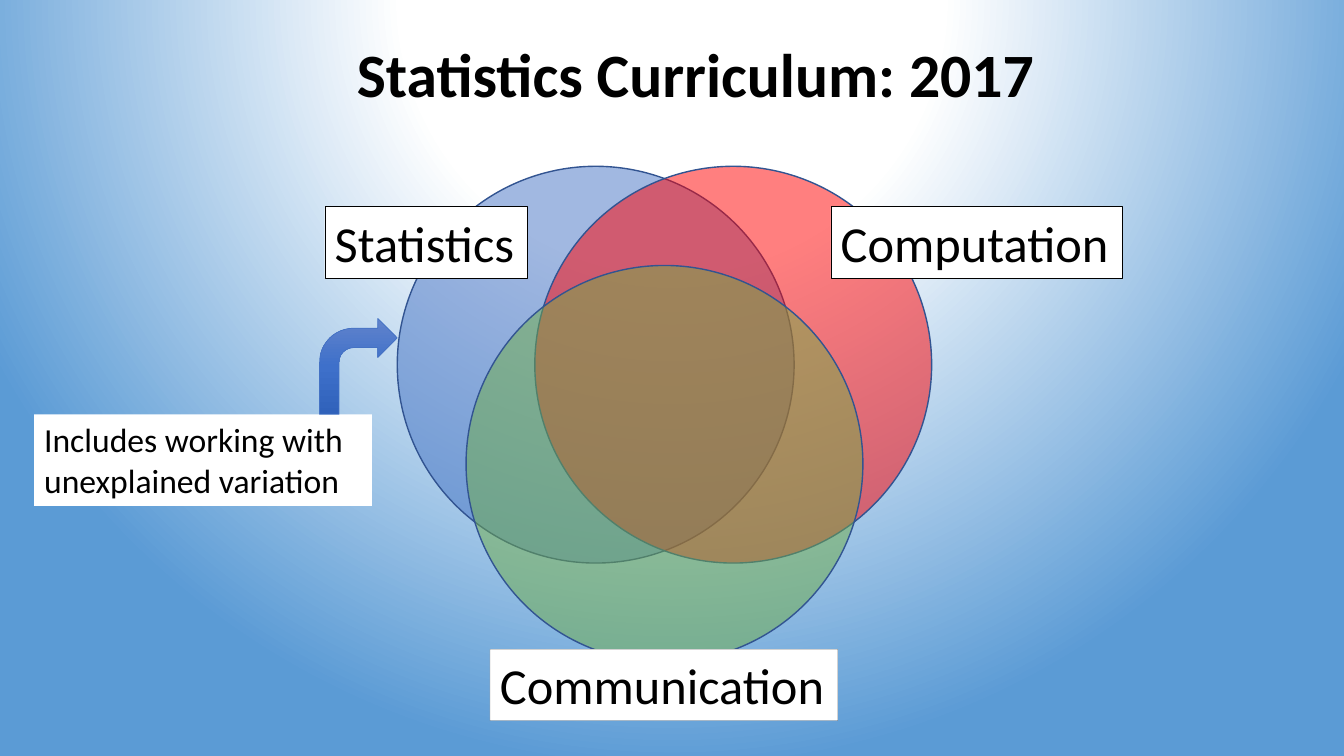
from dataclasses import dataclass

import lxml.etree
import pptx
import pptx.dml.color
import pptx.enum.shapes
import pptx.enum.text
import pptx.oxml.ns
import pptx.util

SHAPES = pptx.enum.shapes.MSO_SHAPE
qn = pptx.oxml.ns.qn


@dataclass(frozen=True)
class Theme:
    font: str = "Calibri"
    title_size: int = 44
    label_size: int = 36
    note_size: int = 24
    text: str = "000000"
    panel: str = "FFFFFF"
    statistics: str = "4472C4"
    computation: str = "FF0000"
    communication: str = "70AD47"
    circle_line: str = "325491"
    arrow_line: str = "4472C4"
    backdrop: tuple = ((0, "FFFFFF"), (35, "FFFFFF"), (100, "5B9BD5"))
    arrow: tuple = ((0, "6183CB"), (50, "3E70CA"), (100, "3062BB"))


THEME = Theme()


@dataclass(frozen=True)
class Box:
    """A rectangle in inches."""
    left: float
    top: float
    width: float
    height: float

    def inner(self, left, top, width, height):
        """Return an inner box given in percent of this one."""
        return Box(self.left + self.width * left / 100,
                   self.top + self.height * top / 100,
                   self.width * width / 100,
                   self.height * height / 100)

    def lengths(self):
        return [pptx.util.Inches(value) for value in
                (self.left, self.top, self.width, self.height)]


def rgb(color):
    return pptx.dml.color.RGBColor.from_string(color)


def set_alpha(element, percent):
    """Make the solid colour inside a fill or line element translucent."""
    color = next(element.iter(qn("a:srgbClr")))
    lxml.etree.SubElement(color, qn("a:alpha"), val=str(percent * 1000))


def set_gradient(owner, stops):
    """Refill the gradient of an element and return it without a direction."""
    gradient = next(owner.iter(qn("a:gradFill")))
    for child in list(gradient):
        gradient.remove(child)
    stop_list = lxml.etree.SubElement(gradient, qn("a:gsLst"))
    for position, color in stops:
        stop = lxml.etree.SubElement(stop_list, qn("a:gs"), pos=str(position * 1000))
        lxml.etree.SubElement(stop, qn("a:srgbClr"), val=color)
    return gradient


def add_backdrop(slide):
    slide.background.fill.gradient()
    gradient = set_gradient(slide.element, THEME.backdrop)
    direction = lxml.etree.SubElement(gradient, qn("a:path"), {"path": "circle"})
    lxml.etree.SubElement(direction, qn("a:fillToRect"),
                          l="50000", t="-80000", r="50000", b="180000")


def add_shape(slide, kind, box, fill=None, line=None, line_width=1):
    shape = slide.shapes.add_shape(kind, *box.lengths())
    shape.shadow.inherit = False
    if fill:
        shape.fill.solid()
        shape.fill.fore_color.rgb = rgb(fill)
    if line:
        shape.line.color.rgb = rgb(line)
        shape.line.width = pptx.util.Pt(line_width)
    else:
        shape.line.fill.background()
    return shape


def write(shape, text, size, bold=False, wrap=False):
    frame = shape.text_frame
    frame.word_wrap = wrap
    frame.auto_size = pptx.enum.text.MSO_AUTO_SIZE.SHAPE_TO_FIT_TEXT
    frame.vertical_anchor = pptx.enum.text.MSO_ANCHOR.TOP
    paragraph = frame.paragraphs[0]
    paragraph.alignment = pptx.enum.text.PP_ALIGN.LEFT
    run = paragraph.add_run()
    run.text = text
    run.font.name = THEME.font
    run.font.size = pptx.util.Pt(size)
    run.font.bold = bold
    run.font.color.rgb = rgb(THEME.text)


def add_title(slide, box):
    title = slide.shapes.add_textbox(*box.lengths())
    write(title, "Statistics Curriculum: 2017", THEME.title_size, bold=True)


def add_venn(slide, box):
    """Draw three overlapping circles with their labels."""
    diameter = 0.8 * box.height
    across = box.width - diameter
    down = box.height - diameter
    circles = ((0, 0, THEME.statistics),
               (across, 0, THEME.computation),
               (across / 2, down, THEME.communication))
    for left, top, color in circles:
        circle_box = Box(box.left + left, box.top + top, diameter, diameter)
        circle = add_shape(slide, SHAPES.OVAL, circle_box, color, THEME.circle_line)
        set_alpha(circle.element.spPr.find(qn("a:solidFill")), 50)

    labels = (("Statistics", -13.58, 8.13, 37.92, 100),
              ("Computation", 81.13, 8.13, 54.53, 100),
              ("Communication", 17.36, 97.36, 65.09, 50))
    for text, left, top, width, line_alpha in labels:
        label = add_shape(slide, SHAPES.RECTANGLE, box.inner(left, top, width, 14.43),
                          THEME.panel, THEME.text, 0.25)
        if line_alpha < 100:
            set_alpha(label.element.spPr.find(qn("a:ln")), line_alpha)
        write(label, text, THEME.label_size)


def add_callout(slide, box):
    """Place the note with the bent arrow that leaves its top edge."""
    note = add_shape(slide, SHAPES.RECTANGLE, box.inner(0, 51.08, 93.06, 48.92), THEME.panel)
    write(note, "Includes working with unexplained variation", THEME.note_size, wrap=True)
    arrow = add_shape(slide, SHAPES.BENT_ARROW, box.inner(78.61, 0, 21.39, 51.08),
                      line=THEME.arrow_line, line_width=0.5)
    arrow.fill.gradient()
    gradient = set_gradient(arrow.element, THEME.arrow)
    lxml.etree.SubElement(gradient, qn("a:lin"), ang="5400000", scaled="0")


def main():
    presentation = pptx.Presentation()
    page = Box(0, 0, 13.33, 7.5)
    presentation.slide_width = pptx.util.Inches(page.width)
    presentation.slide_height = pptx.util.Inches(page.height)
    slide = presentation.slides.add_slide(presentation.slide_layouts[6])
    add_backdrop(slide)
    add_venn(slide, page.inner(29.56, 22, 39.76, 65.6))
    add_title(slide, page.inner(25.81, 4.13, 52.44, 11.2))
    add_callout(slide, page.inner(2.55, 42.13, 27.01, 24.8))
    presentation.save("out.pptx")


if __name__ == "__main__":
    main()
